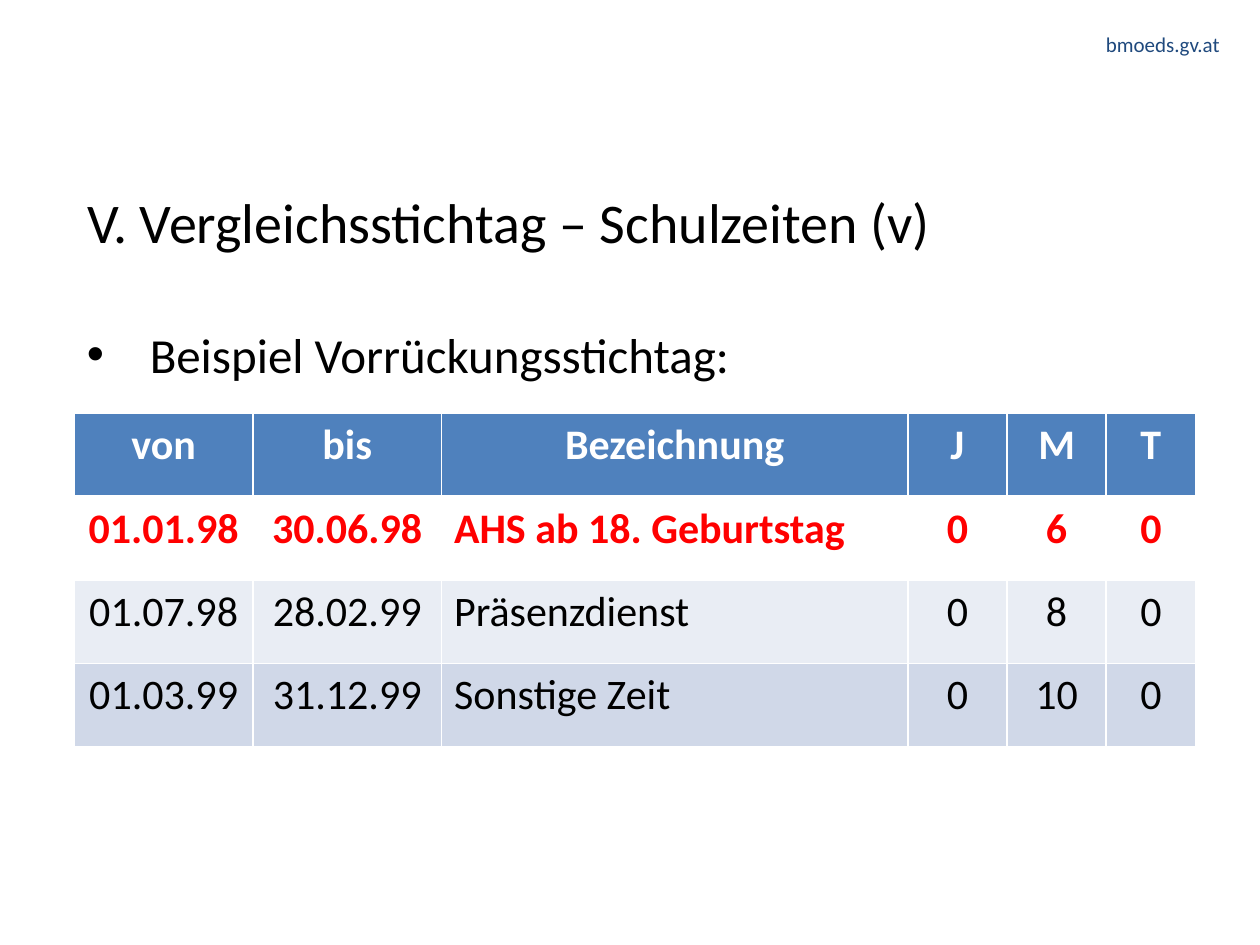
from dataclasses import dataclass

import pptx
import pptx.dml.color
import pptx.enum.text
import pptx.oxml
import pptx.oxml.ns
import pptx.util
from pptx.dml.color import RGBColor
from pptx.util import Cm

BLACK = RGBColor(0x00, 0x00, 0x00)
WHITE = RGBColor(0xFF, 0xFF, 0xFF)
RED = RGBColor(0xFF, 0x00, 0x00)
NAVY = RGBColor(0x1F, 0x49, 0x7D)
BLUE = RGBColor(0x4F, 0x81, 0xBD)
PALE = RGBColor(0xE9, 0xED, 0xF4)
LIGHT = RGBColor(0xD0, 0xD8, 0xE8)
FONT = "Calibri"
ALIGN = pptx.enum.text.PP_ALIGN
LEFT = 1.5  # cm, shared left edge


@dataclass
class Row:
    texts: tuple[str, ...]
    color: RGBColor
    bold: bool
    fill: RGBColor | None


ROWS = [
    Row(("von", "bis", "Bezeichnung", "J", "M", "T"), WHITE, True, BLUE),
    Row(("01.01.98", "30.06.98", "AHS ab 18. Geburtstag", "0", "6", "0"), RED, True, None),
    Row(("01.07.98", "28.02.99", "Präsenzdienst", "0", "8", "0"), BLACK, False, PALE),
    Row(("01.03.99", "31.12.99", "Sonstige Zeit", "0", "10", "0"), BLACK, False, LIGHT),
]
COL_WIDTHS = (3.6, 3.8, 9.4, 2.0, 2.0, 1.8)
ROW_HEIGHT = 1.68
NAME_COL = 2


def write(tf, text: str, size: float, color: RGBColor, align=ALIGN.LEFT, bold=False):
    """Write one formatted paragraph and return it."""
    p = tf.paragraphs[0]
    p.alignment = align
    r = p.add_run()
    r.text = text
    style = {"name": FONT, "size": pptx.util.Pt(size), "bold": bold}
    for key, value in style.items():
        setattr(r.font, key, value)
    r.font.color.rgb = color
    return p


def set_frame(tf, **extra) -> None:
    values = {
        "word_wrap": True,
        "auto_size": pptx.enum.text.MSO_AUTO_SIZE.NONE,
        "vertical_anchor": pptx.enum.text.MSO_ANCHOR.TOP,
        **extra,
    }
    for key, value in values.items():
        setattr(tf, key, value)


def set_hanging(p, indent: float, bullet: str = "") -> None:
    """Hanging indent in cm with an optional bullet, on 42 pt lines."""
    p.line_spacing = pptx.util.Pt(42)
    pPr = p._p.get_or_add_pPr()
    pPr.set("marL", str(Cm(indent)))
    pPr.set("indent", str(-Cm(indent)))
    if bullet:
        ns = pptx.oxml.ns.nsdecls("a")
        for xml in (f'<a:buFont {ns} typeface="Arial"/>', f'<a:buChar {ns} char="{bullet}"/>'):
            pPr.append(pptx.oxml.parse_xml(xml))


def set_borders(cell, top: float, bottom: float) -> None:
    """White cell borders; widths in points."""
    tcPr = cell._tc.get_or_add_tcPr()
    widths = {"lnL": 1, "lnR": 1, "lnT": top, "lnB": bottom}
    for i, (tag, width) in enumerate(widths.items()):
        tcPr.insert(i, pptx.oxml.parse_xml(
            f'<a:{tag} {pptx.oxml.ns.nsdecls("a")} w="{pptx.util.Pt(width)}">'
            f'<a:solidFill><a:srgbClr val="{WHITE}"/></a:solidFill></a:{tag}>'))


def add_period_table(s) -> None:
    table = s.shapes.add_table(
        len(ROWS), len(COL_WIDTHS), Cm(LEFT), Cm(8.34),
        Cm(sum(COL_WIDTHS)), Cm(ROW_HEIGHT * len(ROWS))).table
    for column, width in zip(table.columns, COL_WIDTHS):
        column.width = Cm(width)
    for i, row in enumerate(ROWS):
        table.rows[i].height = Cm(ROW_HEIGHT)
        for j, text in enumerate(row.texts):
            cell = table.cell(i, j)
            if row.fill is None:
                cell.fill.background()
            else:
                cell.fill.solid()
                cell.fill.fore_color.rgb = row.fill
            set_borders(cell, top=3 if i == 1 else 1, bottom=3 if i == 0 else 1)
            align = ALIGN.LEFT if i > 0 and j == NAME_COL else ALIGN.CENTER
            write(cell.text_frame, text, 24, row.color, align, row.bold)


def main() -> None:
    prs = pptx.Presentation()
    prs.slide_width, prs.slide_height = Cm(25.4), Cm(19.05)
    s = prs.slides.add_slide(prs.slide_layouts[5])

    # Title
    title = s.shapes.title
    place = {"left": LEFT, "top": 3.53, "width": 22.17, "height": 2.92}
    for key, value in place.items():
        setattr(title, key, Cm(value))
    set_frame(title.text_frame)
    set_hanging(write(title.text_frame, "V. Vergleichsstichtag – Schulzeiten (v)", 32, BLACK), 1.42)

    # Web address
    sp = s.shapes.add_textbox(Cm(18.47), Cm(0.64), Cm(6.12), Cm(0.51))
    set_frame(sp.text_frame, margin_left=0, margin_top=0, margin_right=0, margin_bottom=0)
    write(sp.text_frame, "bmoeds.gv.at", 12, NAVY, ALIGN.RIGHT)

    # Bullet line
    sp = s.shapes.add_textbox(Cm(LEFT), Cm(6.12), Cm(23.19), Cm(11.81))
    set_frame(sp.text_frame)
    set_hanging(write(sp.text_frame, "Beispiel Vorrückungsstichtag:", 28, BLACK), 1.27, "•")

    # Table of periods
    add_period_table(s)
    prs.save("out.pptx")


if __name__ == "__main__":
    main()
